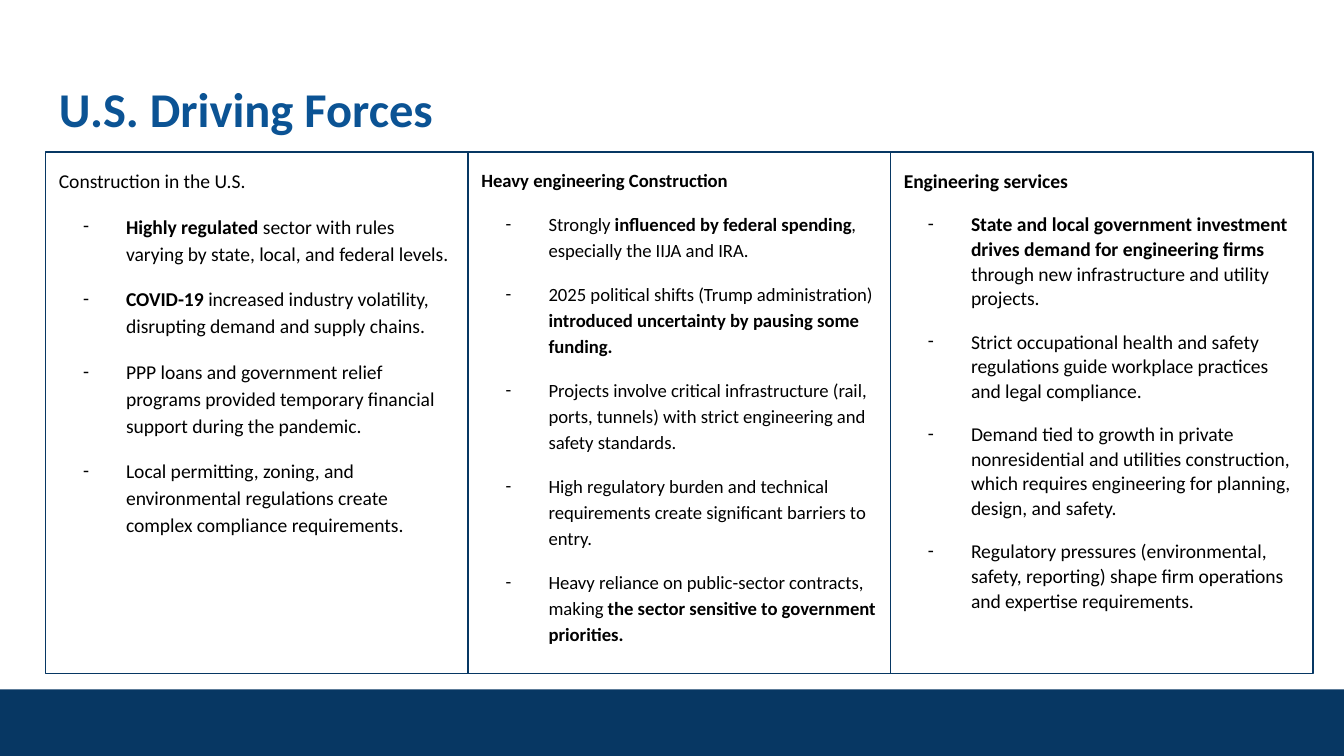
from dataclasses import dataclass

from lxml.etree import SubElement
from pptx import Presentation
from pptx.dml.color import RGBColor
from pptx.enum.shapes import MSO_SHAPE as Preset
from pptx.enum.text import MSO_ANCHOR as Anchor, PP_ALIGN as Align
from pptx.oxml.ns import qn
from pptx.util import Inches, Pt

COLORS = {"title": "0B5394", "navy": "073763", "text": "000000"}
FONT = "Calibri"
WIDTH = 10
HEIGHT = WIDTH * 9 / 16
MARGIN, RIGHT_MARGIN = 0.34, 0.23
COLUMN_TOP, COLUMN_HEIGHT = 1.13, 3.88
FOOTER_TOP = 5.13
PADDING = Inches(0.1)


@dataclass(frozen=True)
class Phrase:
    text: str
    bold: bool = False


@dataclass(frozen=True)
class Column:
    heading: Phrase
    points: list[list[Phrase]]
    size: float = 10.5
    spacing: float = 1.15


COLUMNS = [
    Column(
        Phrase("Construction in the U.S."),
        [
            [Phrase("Highly regulated", True),
             Phrase(" sector with rules varying by state, local, and federal levels.")],
            [Phrase("COVID-19 ", True),
             Phrase("increased industry volatility, disrupting demand and supply chains.")],
            [Phrase("PPP loans and government relief programs provided temporary "
                    "financial support during the pandemic.")],
            [Phrase("Local permitting, zoning, and environmental regulations create "
                    "complex compliance requirements.")],
        ],
    ),
    Column(
        Phrase("Heavy engineering Construction", True),
        [
            [Phrase("Strongly "), Phrase("influenced by federal spending", True),
             Phrase(", especially the IIJA and IRA.")],
            [Phrase("2025 political shifts (Trump administration) "),
             Phrase("introduced uncertainty by pausing some funding.", True)],
            [Phrase("Projects involve critical infrastructure (rail, ports, tunnels) "
                    "with strict engineering and safety standards.")],
            [Phrase("High regulatory burden and technical requirements create "
                    "significant barriers to entry.")],
            [Phrase("Heavy reliance on public-sector contracts, making"),
             Phrase(" the sector sensitive to government priorities.", True)],
        ],
        size=10,
    ),
    Column(
        Phrase("Engineering services", True),
        [
            [Phrase("State and local government investment drives demand for "
                    "engineering firms ", True),
             Phrase("through new infrastructure and utility projects.")],
            [Phrase("Strict occupational health and safety regulations guide "
                    "workplace practices and legal compliance.")],
            [Phrase("Demand tied to growth in private nonresidential and utilities "
                    "construction, which requires engineering for planning, design, "
                    "and safety.")],
            [Phrase("Regulatory pressures (environmental, safety, reporting) shape "
                    "firm operations and expertise requirements.")],
        ],
        spacing=1.05,
    ),
]
COLUMN_WIDTH = (WIDTH - MARGIN - RIGHT_MARGIN) / len(COLUMNS)


def color(name: str) -> RGBColor:
    return RGBColor.from_string(COLORS[name])


def prepare_frame(frame) -> None:
    frame.word_wrap = True
    frame.vertical_anchor = Anchor.TOP
    frame.margin_left = frame.margin_right = PADDING
    frame.margin_top = frame.margin_bottom = PADDING


def write(paragraph, phrases: list[Phrase], size: float, ink: str = "text") -> None:
    paragraph.alignment = Align.LEFT
    for phrase in phrases:
        run = paragraph.add_run()
        run.text = phrase.text
        run.font.name = FONT
        run.font.size = Pt(size)
        run.font.bold = phrase.bold
        run.font.color.rgb = color(ink)


def add_dash(paragraph, size: float) -> None:
    properties = paragraph._p.get_or_add_pPr()
    properties.set("marL", str(Inches(0.5)))
    properties.set("indent", str(Inches(-0.32)))
    tint = SubElement(properties, qn("a:buClr"))
    SubElement(tint, qn("a:srgbClr"), val=COLORS["text"])
    SubElement(properties, qn("a:buSzPts"), val=str(int(size * 100)))
    SubElement(properties, qn("a:buFont"), typeface=FONT)
    SubElement(properties, qn("a:buChar"), char="-")
    paragraph.font.size = Pt(size)


def add_box(slide, left: float, top: float, width: float, height: float):
    box = slide.shapes.add_shape(
        Preset.RECTANGLE, Inches(left), Inches(top), Inches(width), Inches(height))
    box.shadow.inherit = False
    return box


def draw_title(slide, text: str) -> None:
    title = slide.shapes.add_textbox(
        Inches(MARGIN), Inches(0.49), Inches(WIDTH - 2 * MARGIN), Inches(0.63))
    prepare_frame(title.text_frame)
    write(title.text_frame.paragraphs[0], [Phrase(text, True)], 26, "title")


def draw_footer(slide) -> None:
    footer = add_box(slide, 0, FOOTER_TOP, WIDTH, HEIGHT - FOOTER_TOP)
    footer.fill.solid()
    footer.fill.fore_color.rgb = color("navy")
    footer.line.fill.background()


def draw_column(slide, index: int, column: Column) -> None:
    panel = add_box(slide, MARGIN + index * COLUMN_WIDTH, COLUMN_TOP,
                    COLUMN_WIDTH, COLUMN_HEIGHT)
    panel.fill.background()
    panel.line.color.rgb = color("navy")
    panel.line.width = Pt(0.75)
    frame = panel.text_frame
    prepare_frame(frame)
    heading = frame.paragraphs[0]
    heading.line_spacing = 1.15
    write(heading, [column.heading], column.size)
    for phrases in column.points:
        point = frame.add_paragraph()
        add_dash(point, column.size)
        point.line_spacing = column.spacing
        point.space_before = Pt(10)
        write(point, phrases, column.size)


def main() -> None:
    deck = Presentation()
    deck.slide_width, deck.slide_height = Inches(WIDTH), Inches(HEIGHT)
    slide = deck.slides.add_slide(deck.slide_layouts[6])
    draw_title(slide, "U.S. Driving Forces")
    draw_footer(slide)
    for index, column in enumerate(COLUMNS):
        draw_column(slide, index, column)
    deck.save("out.pptx")


if __name__ == "__main__":
    main()
